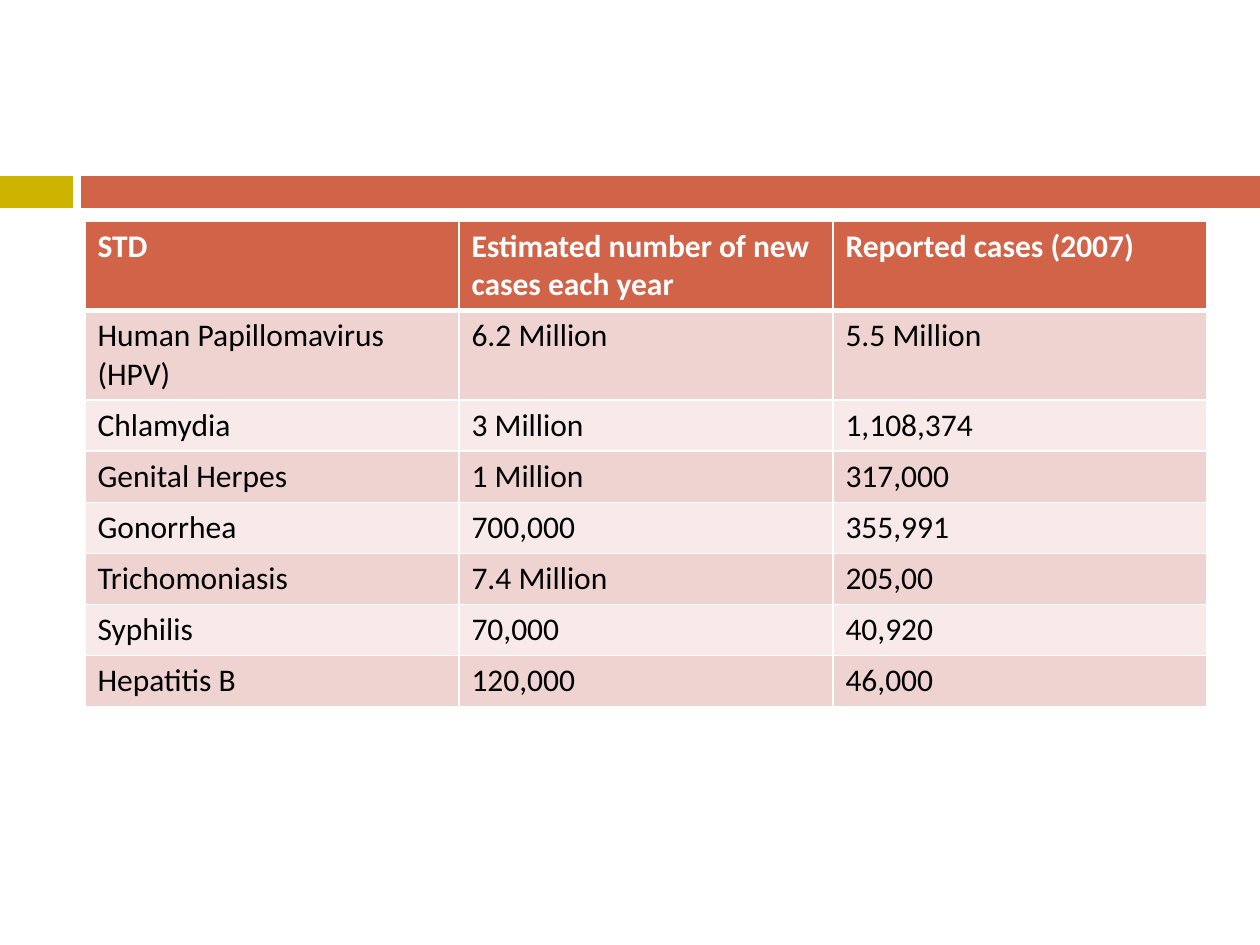
from lxml.etree import SubElement
from pptx import Presentation
from pptx.dml.color import RGBColor
from pptx.enum.shapes import MSO_SHAPE
from pptx.oxml.ns import qn
from pptx.util import Pt

PX = 914400 // 126
RUST, OLIVE, WHITE, BLACK = "D16349", "CCB400", "FFFFFF", "000000"
BANDS = ["F7EAE9", "EED3D0"]

CASES = [
    ("STD", "Estimated number of new cases each year", "Reported cases (2007)"),
    ("Human Papillomavirus (HPV)", "6.2 Million", "5.5 Million"),
    ("Chlamydia", "3 Million", "1,108,374"),
    ("Genital Herpes", "1 Million", "317,000"),
    ("Gonorrhea", "700,000", "355,991"),
    ("Trichomoniasis", "7.4 Million", "205,00"),
    ("Syphilis", "70,000", "40,920"),
    ("Hepatitis B", "120,000", "46,000"),
]


def paint(fill, color):
    fill.solid()
    fill.fore_color.rgb = RGBColor.from_string(color)


def add_border(cell, side, points):
    """Draw a white line on one side (L, R, T or B); call before filling the cell."""
    line = SubElement(cell._tc.get_or_add_tcPr(), qn(f"a:ln{side}"), w=str(Pt(points)))
    SubElement(SubElement(line, qn("a:solidFill")), qn("a:srgbClr"), val=WHITE)


prs = Presentation()
prs.slide_width, prs.slide_height = 1260 * PX, 945 * PX
slide = prs.slides.add_slide(prs.slide_layouts[6])

for left, width, color in [(0, 73, OLIVE), (81, 1179, RUST)]:
    band = slide.shapes.add_shape(
        MSO_SHAPE.RECTANGLE, left * PX, 176 * PX, width * PX, 32 * PX)
    band.shadow.inherit = False
    paint(band.fill, color)
    band.line.fill.background()

table = slide.shapes.add_table(
    len(CASES), 3, 85 * PX, 221 * PX, 1122 * PX, 51 * len(CASES) * PX).table

for r, case in enumerate(CASES):
    is_header = r == 0
    for c, entry in enumerate(case):
        cell = table.cell(r, c)
        cell.text = entry
        font = cell.text_frame.paragraphs[0].font
        font.name, font.size, font.bold = "Calibri", Pt(18), is_header
        paint(font.fill, WHITE if is_header else BLACK)
        for side in "LRTB":
            under_header = (r, side) in [(0, "B"), (1, "T")]
            add_border(cell, side, 3 if under_header else 1)
        paint(cell.fill, RUST if is_header else BANDS[r % 2])

prs.save("out.pptx")
